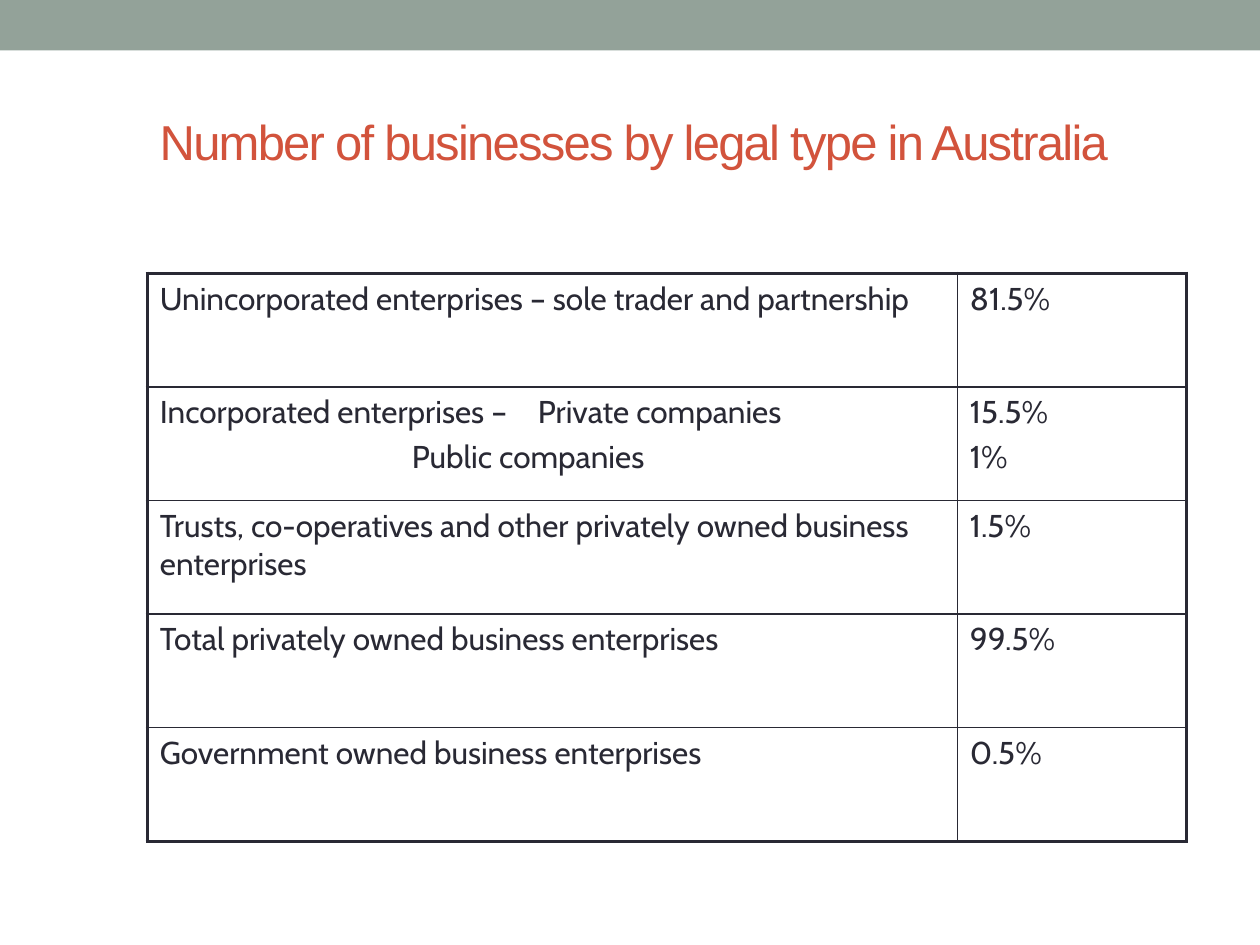
from lxml import etree
from pptx import Presentation
from pptx import util as u
from pptx.dml.color import RGBColor
from pptx.enum import shapes, text
from pptx.oxml import ns

COLORS = {"band": "93A299", "title": "D2533C", "ink": "292934"}
LEFT, WIDTH = u.Cm(2.97), u.Cm(20.95)
COLUMN_WIDTHS = (u.Cm(16.33), u.Cm(4.62))
ROW_HEIGHT = u.Cm(2.29)
OUTER, INNER = u.Pt(2.25), u.Pt(1)
ROWS = [
    ("Unincorporated enterprises – sole trader and partnership", "81.5%"),
    ("Incorporated enterprises – \tPrivate companies\n\t\t\t\tPublic companies", "15.5%\n1%"),
    ("Trusts, co-operatives and other privately owned business enterprises", "1.5%"),
    ("Total privately owned business enterprises", "99.5%"),
    ("Government owned business enterprises", "0.5%"),
]


def rgb(name):
    return RGBColor.from_string(COLORS[name])


def format_runs(paragraph, font_name, size, color):
    for run in paragraph.runs:
        run.font.name = font_name
        run.font.size = u.Pt(size)
        run.font.color.rgb = rgb(color)


def add_band(slide, width):
    band = slide.shapes.add_shape(shapes.MSO_SHAPE.RECTANGLE, 0, 0, width, u.Cm(1.02))
    band.shadow.inherit = False
    band.fill.solid()
    band.fill.fore_color.rgb = rgb("band")
    band.line.fill.background()


def add_title(slide, wording):
    box = slide.shapes.add_textbox(LEFT, u.Cm(0.84), WIDTH, u.Cm(3.99))
    frame = box.text_frame
    frame.word_wrap = True
    frame.vertical_anchor = text.MSO_ANCHOR.MIDDLE
    frame.text = wording
    paragraph = frame.paragraphs[0]
    format_runs(paragraph, "Arial", 28, "title")
    paragraph.runs[0]._r.get_or_add_rPr().set("spc", "-100")


def set_borders(cell, widths):
    """Draw the left, right, top and bottom borders, in that order."""
    properties = cell._tc.get_or_add_tcPr()
    for side, width in zip("LRTB", widths):
        line = etree.SubElement(properties, ns.qn(f"a:ln{side}"), w=str(int(width)))
        fill = etree.SubElement(line, ns.qn("a:solidFill"))
        etree.SubElement(fill, ns.qn("a:srgbClr"), val=COLORS["ink"])


def add_table(slide, rows):
    last_row, last_column = len(rows) - 1, len(COLUMN_WIDTHS) - 1
    table = slide.shapes.add_table(len(rows), len(COLUMN_WIDTHS), LEFT, u.Cm(5.51),
                                   WIDTH, ROW_HEIGHT * len(rows)).table
    table.first_row = table.horz_banding = False
    for column, width in zip(table.columns, COLUMN_WIDTHS):
        column.width = width
    for i, row in enumerate(rows):
        table.rows[i].height = ROW_HEIGHT
        for j, wording in enumerate(row):
            cell = table.cell(i, j)
            edges = (j == 0, j == last_column, i == 0, i == last_row)
            set_borders(cell, [OUTER if edge else INNER for edge in edges])
            cell.fill.background()
            cell.text_frame.text = wording
            for paragraph in cell.text_frame.paragraphs:
                paragraph.space_before = u.Pt(3.6)
                format_runs(paragraph, "Cabin", 18, "ink")


def main():
    presentation = Presentation()
    presentation.slide_width, presentation.slide_height = u.Cm(25.4), u.Cm(19.05)
    slide = presentation.slides.add_slide(presentation.slide_layouts[6])
    add_band(slide, presentation.slide_width)
    add_title(slide, "Number of businesses by legal type in Australia")
    add_table(slide, ROWS)
    presentation.save("out.pptx")


if __name__ == "__main__":
    main()
